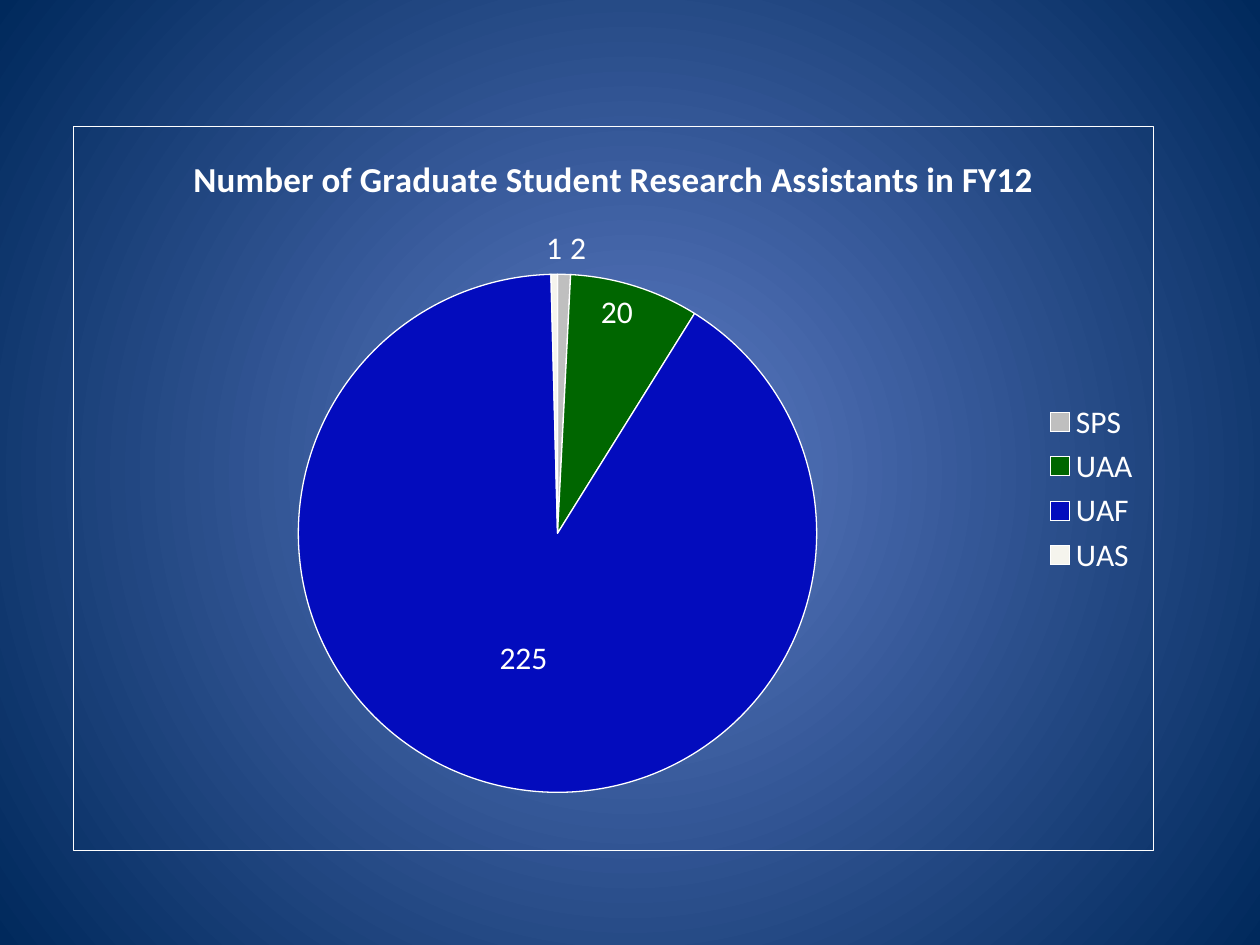
from dataclasses import dataclass

from lxml import etree
from pptx import Presentation
from pptx.chart.data import CategoryChartData
from pptx.dml.color import RGBColor
from pptx.enum.chart import XL_CHART_TYPE, XL_LABEL_POSITION, XL_LEGEND_POSITION
from pptx.oxml import parse_xml
from pptx.oxml.ns import nsdecls, qn
from pptx.util import Emu, Pt

PIE = XL_CHART_TYPE.PIE
LEGEND_RIGHT = XL_LEGEND_POSITION.RIGHT
BEST_FIT = XL_LABEL_POSITION.BEST_FIT
CENTER = XL_LABEL_POSITION.CENTER
INSIDE_END = XL_LABEL_POSITION.INSIDE_END
EMU_PER_PX = 914400 / 126


@dataclass(frozen=True)
class Theme:
    font: str = "Calibri"
    text: str = "FFFFFF"
    outline: str = "FFFFFF"
    glow: str = "5E7CC5"
    edge: str = "00295C"
    title_size: int = 20
    body_size: int = 18
    line_width: float = 0.75


THEME = Theme()
TITLE = "Number of Graduate Student Research Assistants in FY12"
CAMPUSES = [
    ("SPS", 2, "BFBFBF", None),
    ("UAA", 20, "006600", INSIDE_END),
    ("UAF", 225, "030CBD", CENTER),
    ("UAS", 1, "F5F4ED", None),
]
FRAME = (73, 126, 1081, 725)
PIE_AREA = (225, 148, 519, 519)


def px(length):
    return Emu(round(length * EMU_PER_PX))


def style_font(font, size, bold=False):
    font.name = THEME.font
    font.size = Pt(size)
    font.bold = bold
    font.color.rgb = RGBColor.from_string(THEME.text)


def paint_background(slide):
    fill = slide.background.fill
    fill.gradient()
    for stop, color in zip(fill.gradient_stops, (THEME.glow, THEME.edge)):
        stop.color.rgb = RGBColor.from_string(color)
    gradient = slide.element.find(".//" + qn("a:gradFill"))
    gradient.replace(gradient.find(qn("a:lin")), parse_xml(
        f'<a:path {nsdecls("a")} path="circle">'
        '<a:fillToRect l="50000" t="50000" r="50000" b="50000"/></a:path>'))


def frame_chart(chart):
    border = parse_xml(
        f'<c:spPr {nsdecls("c", "a")}><a:noFill/>'
        f'<a:ln w="{Pt(THEME.line_width)}"><a:solidFill>'
        f'<a:srgbClr val="{THEME.outline}"/></a:solidFill></a:ln></c:spPr>')
    chart.element.find(qn("c:txPr")).addprevious(border)


def place_pie(chart):
    plot_area = chart.element.find(".//" + qn("c:plotArea"))
    for old_layout in plot_area.findall(qn("c:layout")):
        plot_area.remove(old_layout)
    layout = etree.Element(qn("c:layout"))
    manual = etree.SubElement(layout, qn("c:manualLayout"))
    left, top, width, height = PIE_AREA
    settings = {
        "layoutTarget": "inner",
        "xMode": "edge",
        "yMode": "edge",
        "x": round(left / FRAME[2], 4),
        "y": round(top / FRAME[3], 4),
        "w": round(width / FRAME[2], 4),
        "h": round(height / FRAME[3], 4),
    }
    for tag, value in settings.items():
        etree.SubElement(manual, qn(f"c:{tag}")).set("val", str(value))
    plot_area.insert(0, layout)


def add_title(chart):
    chart.has_title = True
    chart.chart_title.include_in_layout = False
    chart.chart_title.text_frame.text = TITLE
    heading = chart.chart_title.text_frame.paragraphs[0]
    style_font(heading.font, THEME.title_size, bold=True)


def add_legend(chart):
    chart.has_legend = True
    chart.legend.position = LEGEND_RIGHT
    chart.legend.include_in_layout = False
    style_font(chart.legend.font, THEME.body_size)


def style_slices(plot):
    plot.vary_by_categories = True
    assistants = plot.series[0]
    counts = assistants.data_labels
    counts.show_value = True
    counts.position = BEST_FIT
    style_font(counts.font, THEME.body_size)
    for index, (_, _, color, label_position) in enumerate(CAMPUSES):
        campus = assistants.points[index]
        campus.format.fill.solid()
        campus.format.fill.fore_color.rgb = RGBColor.from_string(color)
        campus.format.line.color.rgb = RGBColor.from_string(THEME.outline)
        campus.format.line.width = Pt(THEME.line_width)
        if label_position is not None:
            style_font(campus.data_label.font, THEME.body_size)
            campus.data_label.position = label_position


def add_assistants_chart(slide):
    data = CategoryChartData()
    data.categories = [name for name, *_ in CAMPUSES]
    data.add_series("Series 1", [count for _, count, *_ in CAMPUSES])
    chart = slide.shapes.add_chart(PIE, *map(px, FRAME), data).chart
    style_font(chart.font, THEME.body_size)
    add_title(chart)
    add_legend(chart)
    style_slices(chart.plots[0])
    place_pie(chart)
    frame_chart(chart)


def main():
    deck = Presentation()
    deck.slide_width = px(1260)
    deck.slide_height = px(945)
    slide = deck.slides.add_slide(deck.slide_layouts[6])
    paint_background(slide)
    add_assistants_chart(slide)
    deck.save("out.pptx")


if __name__ == "__main__":
    main()
